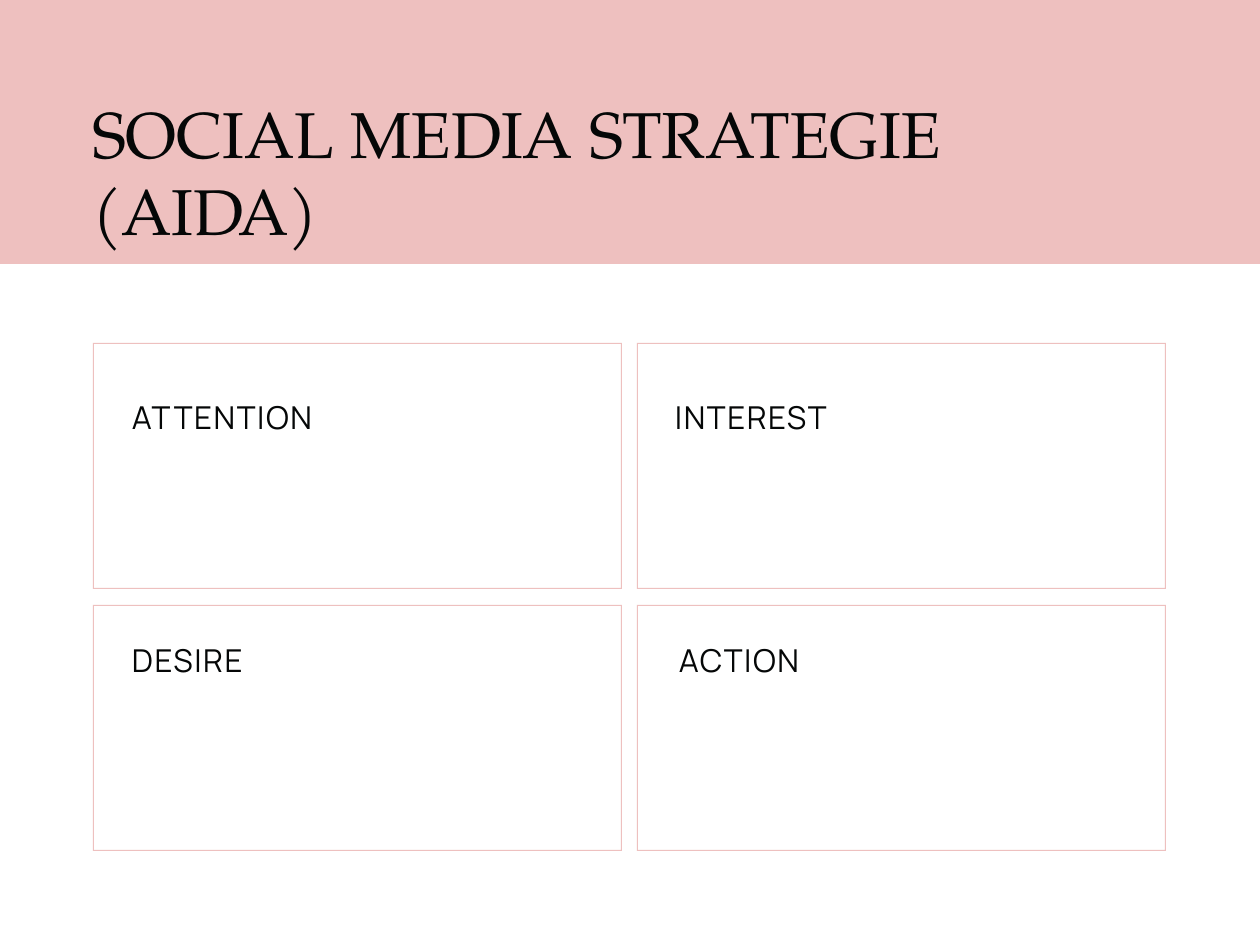
from pptx import Presentation
from pptx.dml.color import RGBColor
from pptx.enum.shapes import MSO_SHAPE
from pptx.enum.text import MSO_AUTO_SIZE
from pptx.util import Emu, Pt

PINK = "EEC0BF"
INK = "050707"
LEFT, TOP = 93, 343
WIDTH, HEIGHT = 529, 246
STEP_X, STEP_Y = 544, 262
EDGE = 1
LABELS = [
    ("ATTENTION", 132, 398),
    ("INTEREST", 675, 398),
    ("DESIRE", 132, 640),
    ("ACTION", 679, 640),
]


def px(n):
    return Emu(round(n * 914400 / 126))


def color(code):
    return RGBColor.from_string(code)


def paint(shape, code):
    """Give the shape a flat fill with no line and no shadow."""
    shape.shadow.inherit = False
    shape.fill.solid()
    shape.fill.fore_color.rgb = color(code)
    shape.line.fill.background()


def add_band(slide, x, y, w, h):
    band = slide.shapes.add_shape(MSO_SHAPE.RECTANGLE, px(x), px(y), px(w), px(h))
    paint(band, PINK)


def add_frame(slide, x, y, w, h):
    """Draw a hollow box: an outer outline with an inner one cut out."""
    right, low = x + w, y + h
    outer = [(x, y), (x, low), (right, low), (right, y)]
    inner = [
        (right - EDGE, low - EDGE),
        (x + EDGE, low - EDGE),
        (x + EDGE, y + EDGE),
        (right - EDGE, y + EDGE),
    ]
    outer, inner = ([(px(a), px(b)) for a, b in ring] for ring in (outer, inner))
    pen = slide.shapes.build_freeform(*outer[0])
    pen.add_line_segments(outer[1:], close=True)
    pen.move_to(*inner[0])
    pen.add_line_segments(inner[1:], close=True)
    paint(pen.convert_to_shape(), PINK)


def add_text(slide, text, x, y, w, h, font, size, lead, gap=0):
    """Add a text box; lead is the line height and gap the letter spacing, in points."""
    box = slide.shapes.add_textbox(px(x), px(y), px(w), px(h))
    frame = box.text_frame
    frame.word_wrap = True
    frame.auto_size = MSO_AUTO_SIZE.SHAPE_TO_FIT_TEXT
    frame.margin_left = frame.margin_right = 0
    frame.margin_top = frame.margin_bottom = 0
    para = frame.paragraphs[0]
    para.line_spacing = Pt(lead)
    run = para.add_run()
    run.text = text
    run.font.name = font
    run.font.size = Pt(size)
    run.font.color.rgb = color(INK)
    if gap:
        run._r.get_or_add_rPr().set("spc", str(round(gap * 100)))


def main():
    deck = Presentation()
    deck.slide_width, deck.slide_height = px(1260), px(945)
    slide = deck.slides.add_slide(deck.slide_layouts[6])
    for row in range(2):
        for col in range(2):
            add_frame(slide, LEFT + col * STEP_X, TOP + row * STEP_Y, WIDTH, HEIGHT)
    for text, x, y in LABELS:
        add_text(slide, text, x, y, 452, 39, "Manrope", 18, 21.9, 0.9)
    add_band(slide, -16, -13, 1293, 277)
    add_text(slide, "SOCIAL MEDIA STRATEGIE (AIDA)", 92, 95, 1076, 78,
             "TeX Gyre Pagella", 37, 43.9)
    deck.save("out.pptx")


if __name__ == "__main__":
    main()
